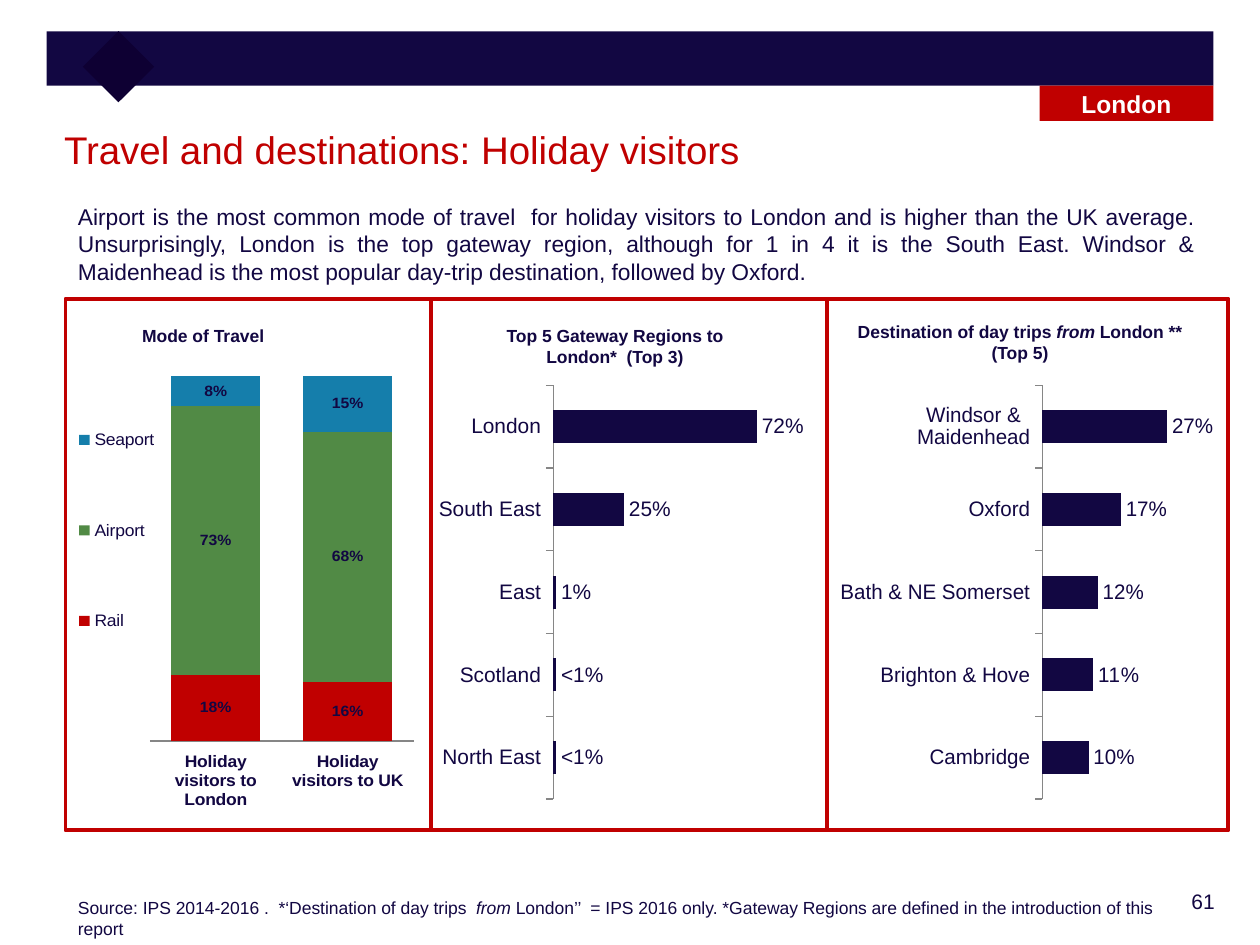
from dataclasses import dataclass
from itertools import accumulate

from lxml.etree import SubElement
from pptx import Presentation
from pptx.chart.data import CategoryChartData
from pptx.dml.color import RGBColor
from pptx.enum.chart import XL_CHART_TYPE, XL_LABEL_POSITION, XL_LEGEND_POSITION, XL_TICK_LABEL_POSITION, XL_TICK_MARK
from pptx.enum.shapes import MSO_SHAPE
from pptx.enum.text import MSO_ANCHOR, PP_ALIGN
from pptx.oxml.ns import qn
from pptx.util import Inches, Pt


@dataclass(frozen=True)
class Theme:
    font: str = "Arial"
    chart_font: str = "Calibri"
    navy: str = "120742"
    diamond: str = "0E0033"
    red: str = "C00000"
    green: str = "518A45"
    blue: str = "157EAB"
    axis: str = "868686"
    white: str = "FFFFFF"
    title: float = 22
    chart: float = 18
    tag: float = 14
    summary: float = 13
    label: float = 12
    small: float = 10
    share: float = 9
    border: float = 2.25


THEME = Theme()
WIDTH, HEIGHT = Inches(10), Inches(7.5)
COLUMNS, ROWS = 100, 75
LEFT, CENTER, RIGHT, JUSTIFY = PP_ALIGN.LEFT, PP_ALIGN.CENTER, PP_ALIGN.RIGHT, PP_ALIGN.JUSTIFY

SUMMARY = (
    "Airport is the most common mode of travel  for holiday visitors to London and is higher than "
    "the UK average. Unsurprisingly, London is the top gateway region, although for 1 in 4 it is the "
    "South East. Windsor & Maidenhead is the most popular day-trip destination, followed by Oxford."
)

TEXTS = [
    ((85.3, 70, 12.1, 3.6), [["61"]], THEME.label, THEME.navy, False, RIGHT),
    ((4.1, 9.5, 92.1, 6.1), [["Travel and destinations: Holiday visitors"]], THEME.title, THEME.red, False, LEFT),
    ((5.2, 15.6, 90.5, 8.5), [[SUMMARY]], THEME.summary, THEME.navy, False, JUSTIFY),
    ((10.3, 25.3, 19, 3.1), [["Mode of Travel"]], THEME.small, THEME.navy, True, LEFT),
    ((38.2, 25.3, 21.2, 4.6), [["Top 5 Gateway Regions to London*  (Top 3)"]],
     THEME.small, THEME.navy, True, CENTER),
    ((63.8, 25, 34.3, 4.9), [["Destination of day trips ", "from", " London **"], ["(Top 5)"]],
     THEME.small, THEME.navy, True, CENTER),
    ((5.2, 70.7, 90.8, 4.4),
     [["Source: IPS 2014-2016 .  *‘Destination of day trips  ", "from ",
       "London’’  = IPS 2016 only. *Gateway Regions are defined in the introduction of this report"]],
     THEME.small, THEME.navy, False, LEFT),
]

MODES = {
    "area": (4.9, 27.8, 29.1, 36.4),
    "plot": (0.24, 0.06, 0.72, 0.84),
    "legend": (0.03, 0.02, 0.24, 0.79),
    "visitors": ["Holiday visitors to London", "Holiday visitors to UK"],
    "shares": [
        ("Rail", (0.18, 0.16), THEME.red),
        ("Airport", (0.73, 0.68), THEME.green),
        ("Seaport", (0.08, 0.15), THEME.blue),
    ],
}

RANKINGS = [
    {
        "area": (34.2, 29.9, 29.6, 34.2),
        "plot": (0.33, 0.02, 0.61, 0.96),
        "top": 0.8,
        "places": {"London": 0.72, "South East": 0.25, "East": 0.01, "Scotland": 0.01, "North East": 0.01},
        "below_one": {3: "<1%", 4: "<1%"},
    },
    {
        "area": (66.7, 29.9, 29.6, 34.2),
        "plot": (0.54, 0.02, 0.38, 0.96),
        "top": 0.3,
        "places": {"Windsor & Maidenhead": 0.27, "Oxford": 0.17, "Bath & NE Somerset": 0.12,
                   "Brighton & Hove": 0.11, "Cambridge": 0.1},
        "below_one": {},
    },
]

PANEL_LEFT, PANEL_TOP, PANEL_HEIGHT = 5.2, 23.7, 42.2
PANEL_WIDTHS = [29, 31.4, 31.9]


def place(area):
    left, top, width, height = area
    return (round(left * WIDTH / COLUMNS), round(top * HEIGHT / ROWS),
            round(width * WIDTH / COLUMNS), round(height * HEIGHT / ROWS))


def style(font, size, color=THEME.navy, bold=False, name=THEME.font):
    font.name, font.size, font.bold = name, Pt(size), bold
    font.color.rgb = RGBColor.from_string(color)


def write(frame, paragraphs, size, color, bold, align):
    frame.word_wrap = True
    for index, pieces in enumerate(paragraphs):
        paragraph = frame.add_paragraph() if index else frame.paragraphs[0]
        paragraph.alignment = align
        style(paragraph.font, size, color, bold)
        for position, piece in enumerate(pieces):
            run = paragraph.add_run()
            run.text = piece
            if position % 2:
                run.font.italic = True


def add_box(slide, area, fill=None, line=None):
    box = slide.shapes.add_shape(MSO_SHAPE.RECTANGLE, *place(area))
    box.shadow.inherit = False
    if fill:
        box.fill.solid()
        box.fill.fore_color.rgb = RGBColor.from_string(fill)
    else:
        box.fill.background()
    if line:
        box.line.color.rgb = RGBColor.from_string(line)
        box.line.width = Pt(THEME.border)
    else:
        box.line.fill.background()
    return box


def set_layout(parent, after, shares, inner=False):
    for stale in parent.findall(qn("c:layout")):
        parent.remove(stale)
    layout = SubElement(parent, qn("c:layout"))
    manual = SubElement(layout, qn("c:manualLayout"))
    settings = [("layoutTarget", "inner")] if inner else []
    settings += [("xMode", "edge"), ("yMode", "edge"), *zip("xywh", shares)]
    for tag, value in settings:
        SubElement(manual, qn(f"c:{tag}")).set("val", str(value))
    parent.insert(after, layout)


def add_chart(slide, kind, area, shares, categories, series, gap, name, size):
    data = CategoryChartData(number_format="0%")
    data.categories = categories
    for label, values, _ in series:
        data.add_series(label, values)
    chart = slide.shapes.add_chart(kind, *place(area), data).chart
    style(chart.font, size, name=name)
    chart.has_title = chart.has_legend = False
    chart.value_axis.visible = chart.value_axis.has_major_gridlines = False
    chart.value_axis.minimum_scale = 0
    chart.category_axis.format.line.color.rgb = RGBColor.from_string(THEME.axis)
    chart.category_axis.tick_label_position = XL_TICK_LABEL_POSITION.LOW
    plot = chart.plots[0]
    plot.gap_width, plot.vary_by_categories = gap, False
    for bars, (_, _, color) in zip(plot.series, series):
        bars.format.fill.solid()
        bars.format.fill.fore_color.rgb = RGBColor.from_string(color)
        labels = bars.data_labels
        labels.show_value, labels.number_format, labels.number_format_is_linked = True, "0%", False
    set_layout(chart.element.find(".//" + qn("c:plotArea")), 0, shares, inner=True)
    return chart


def add_modes(slide):
    chart = add_chart(slide, XL_CHART_TYPE.COLUMN_STACKED_100, MODES["area"], MODES["plot"],
                      MODES["visitors"], MODES["shares"], 49, THEME.font, THEME.small)
    chart.plots[0].overlap = 100
    chart.category_axis.major_tick_mark = XL_TICK_MARK.NONE
    style(chart.category_axis.tick_labels.font, THEME.small, bold=True)
    for mode in chart.plots[0].series:
        style(mode.data_labels.font, THEME.share, bold=True)
    chart.has_legend = True
    chart.legend.position, chart.legend.include_in_layout = XL_LEGEND_POSITION.LEFT, False
    style(chart.legend.font, THEME.small)
    set_layout(chart.element.find(".//" + qn("c:legend")), 1, MODES["legend"])


def add_ranking(slide, ranking):
    places = ranking["places"]
    chart = add_chart(slide, XL_CHART_TYPE.BAR_CLUSTERED, ranking["area"], ranking["plot"], list(places),
                      [("Series 1", list(places.values()), THEME.navy)], 150, THEME.chart_font, THEME.chart)
    chart.value_axis.maximum_scale = ranking["top"]
    chart.category_axis.reverse_order = True
    chart.category_axis.major_tick_mark = XL_TICK_MARK.OUTSIDE
    style(chart.category_axis.tick_labels.font, THEME.label)
    bars = chart.plots[0].series[0]
    bars.data_labels.position = XL_LABEL_POSITION.OUTSIDE_END
    style(bars.data_labels.font, THEME.label)
    for index, wording in ranking["below_one"].items():
        label = bars.points[index].data_label
        label.text_frame.text = wording
        label.position = XL_LABEL_POSITION.OUTSIDE_END
        style(label.text_frame.paragraphs[0].runs[0].font, THEME.label)


def main():
    deck = Presentation()
    deck.slide_width, deck.slide_height = WIDTH, HEIGHT
    slide = deck.slides.add_slide(deck.slide_layouts[6])
    add_box(slide, (3.7, 2.5, 92.6, 4.3), THEME.navy)
    add_box(slide, (7.4, 3.3, 4, 4), THEME.diamond).rotation = 45
    for area, *content in TEXTS:
        write(slide.shapes.add_textbox(*place(area)).text_frame, *content)
    add_modes(slide)
    for left, width in zip(accumulate(PANEL_WIDTHS, initial=PANEL_LEFT), PANEL_WIDTHS):
        add_box(slide, (left, PANEL_TOP, width, PANEL_HEIGHT), line=THEME.red)
    for ranking in RANKINGS:
        add_ranking(slide, ranking)
    region = add_box(slide, (82.5, 6.8, 13.8, 2.8), THEME.red).text_frame
    region.vertical_anchor = MSO_ANCHOR.MIDDLE
    write(region, [["London"]], THEME.tag, THEME.white, True, CENTER)
    deck.save("out.pptx")


if __name__ == "__main__":
    main()
